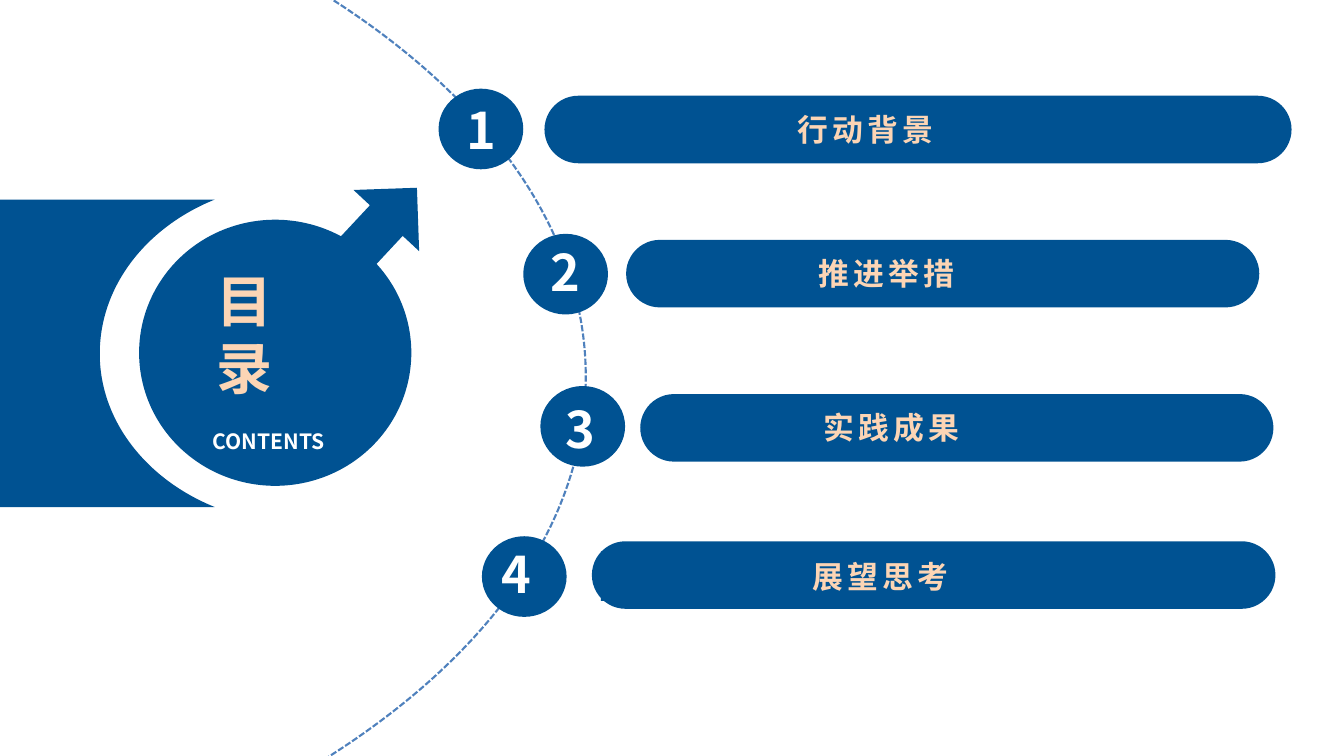
from dataclasses import dataclass

import pptx
import pptx.util
import pptx.dml.color
import pptx.enum.dml
import pptx.enum.shapes
import pptx.enum.text
import pptx.oxml.ns

Inches = pptx.util.Inches
MSO_SHAPE = pptx.enum.shapes.MSO_SHAPE
PP_ALIGN = pptx.enum.text.PP_ALIGN
qn = pptx.oxml.ns.qn

COLORS = {"navy": "005292", "peach": "FCD5B5", "white": "FFFFFF", "arc": "4F81BD"}
FONT = "Noto Sans CJK SC"
Point = tuple[float, float]
Box = tuple[float, float, float, float]


@dataclass
class Entry:
    number: str
    label: str
    circle: Point
    digit: Point
    pill: tuple[float, float, float]
    label_box: tuple[float, float, float]
    text_left: float


ENTRIES = [
    Entry("1", "行动背景", (4.35, 0.88), (4.51, 0.92), (5.4, 0.95, 7.41), (5.59, 1.04, 4.31), 7.91),
    Entry("2", "推进举措", (5.19, 2.32), (5.34, 2.33), (6.21, 2.38, 6.28), (6.35, 2.47, 3.64), 8.12),
    Entry("3", "实践成果", (5.36, 3.83), (5.49, 3.89), (6.35, 3.91, 6.28), (6.51, 3.99, 3.51), 8.17),
    Entry("4", "展望思考", (4.78, 5.32), (4.85, 5.33), (5.87, 5.37, 6.78), (5.96, 5.47, 6.54), 8.06),
]


def rgb(name: str) -> pptx.dml.color.RGBColor:
    return pptx.dml.color.RGBColor.from_string(COLORS[name])


def paint(sp) -> None:
    sp.shadow.inherit = False
    sp.fill.solid()
    sp.fill.fore_color.rgb = rgb("navy")
    sp.line.fill.background()


def add_solid(s, kind: MSO_SHAPE, box: Box):
    sp = s.shapes.add_shape(kind, *map(Inches, box))
    paint(sp)
    return sp


def write(sp, text: str, size: float, color: str, align: PP_ALIGN = PP_ALIGN.LEFT,
          left: float = 0.12, spacing: int = 0) -> None:
    tf = sp.text_frame
    tf.text = text
    tf.word_wrap = True
    tf.auto_size = pptx.enum.text.MSO_AUTO_SIZE.NONE
    tf.vertical_anchor = pptx.enum.text.MSO_ANCHOR.TOP
    tf.margin_left, tf.margin_right = Inches(left), Inches(0.12)
    tf.margin_top = tf.margin_bottom = Inches(0.06)
    for p in tf.paragraphs:
        p.alignment = align
        for r in p.runs:
            r.font.name = FONT
            r.font.size = pptx.util.Pt(size)
            r.font.bold = True
            r.font.color.rgb = rgb(color)
            rPr = r.font._element
            if spacing:
                rPr.set("spc", str(spacing))
            ea = rPr.makeelement(qn("a:ea"), {"typeface": FONT})
            rPr.find(qn("a:latin")).addnext(ea)


def add_outline(s, corners: list[Point], curves: list[Point], close: bool):
    points = [(Inches(x), Inches(y)) for x, y in corners + curves]
    builder = s.shapes.build_freeform(*points[0])
    builder.add_line_segments(points[1:], close=close)
    sp = builder.convert_to_shape()
    segments = list(sp._element.iter(qn("a:lnTo")))[len(corners) - 1:]
    for first, second, third in zip(*[iter(segments)] * 3):
        bezier = first.makeelement(qn("a:cubicBezTo"), {})
        first.addprevious(bezier)
        for segment in (first, second, third):
            bezier.append(segment[0])
            segment.getparent().remove(segment)
    return sp


def add_banner(s) -> None:
    corners = [(2.13, 5.03), (0, 5.03), (0, 1.98), (2.13, 1.98)]
    curves = [(1.46, 2.25), (0.99, 2.83), (0.99, 3.51),
              (0.99, 4.18), (1.46, 4.76), (2.13, 5.03)]
    paint(add_outline(s, corners, curves, True))


def add_arc(s) -> None:
    curves = [(4.84, 0.97), (5.81, 2.29), (5.81, 3.74),
              (5.81, 5.19), (4.84, 6.51), (3.24, 7.52)]
    sp = add_outline(s, [(3.24, -0.04)], curves, False)
    sp.shadow.inherit = False
    sp.fill.background()
    sp.line.color.rgb = rgb("arc")
    sp.line.width = pptx.util.Pt(1.5)
    sp.line.dash_style = pptx.enum.dml.MSO_LINE.SQUARE_DOT


def add_entry(s, entry: Entry) -> None:
    add_solid(s, MSO_SHAPE.OVAL, (*entry.circle, 0.84, 0.8))
    pill = add_solid(s, MSO_SHAPE.ROUNDED_RECTANGLE, (*entry.pill, 0.67))
    pill.adjustments[0] = 0.5
    label = add_solid(s, MSO_SHAPE.RECTANGLE, (*entry.label_box, 0.49))
    write(label, entry.label, 22, "peach", left=entry.text_left - entry.label_box[0], spacing=300)
    digit = s.shapes.add_textbox(*map(Inches, (*entry.digit, 0.55, 0.73)))
    write(digit, entry.number, 36, "white")


def add_title(s) -> None:
    add_solid(s, MSO_SHAPE.OVAL, (1.38, 2.18, 2.7, 2.64))
    title = s.shapes.title
    title.left, title.top, title.width, title.height = map(Inches, (2.03, 2.58, 1.33, 1.47))
    title.fill.solid()
    title.fill.fore_color.rgb = rgb("navy")
    write(title, "目\n录", 40, "peach", PP_ALIGN.JUSTIFY)
    s.shapes._spTree.append(title._element)
    contents = add_solid(s, MSO_SHAPE.RECTANGLE, (1.99, 4.19, 1.42, 0.37))
    write(contents, "CONTENTS", 15, "white")


def main() -> None:
    prs = pptx.Presentation()
    prs.slide_width, prs.slide_height = Inches(13.33), Inches(7.5)
    s = prs.slides.add_slide(prs.slide_layouts[5])
    arrow = add_solid(s, MSO_SHAPE.RIGHT_ARROW, (3.37, 1.75, 0.91, 0.89))
    arrow.rotation = 313
    add_banner(s)
    add_arc(s)
    for entry in ENTRIES:
        add_entry(s, entry)
    add_title(s)
    prs.save("out.pptx")


if __name__ == "__main__":
    main()
